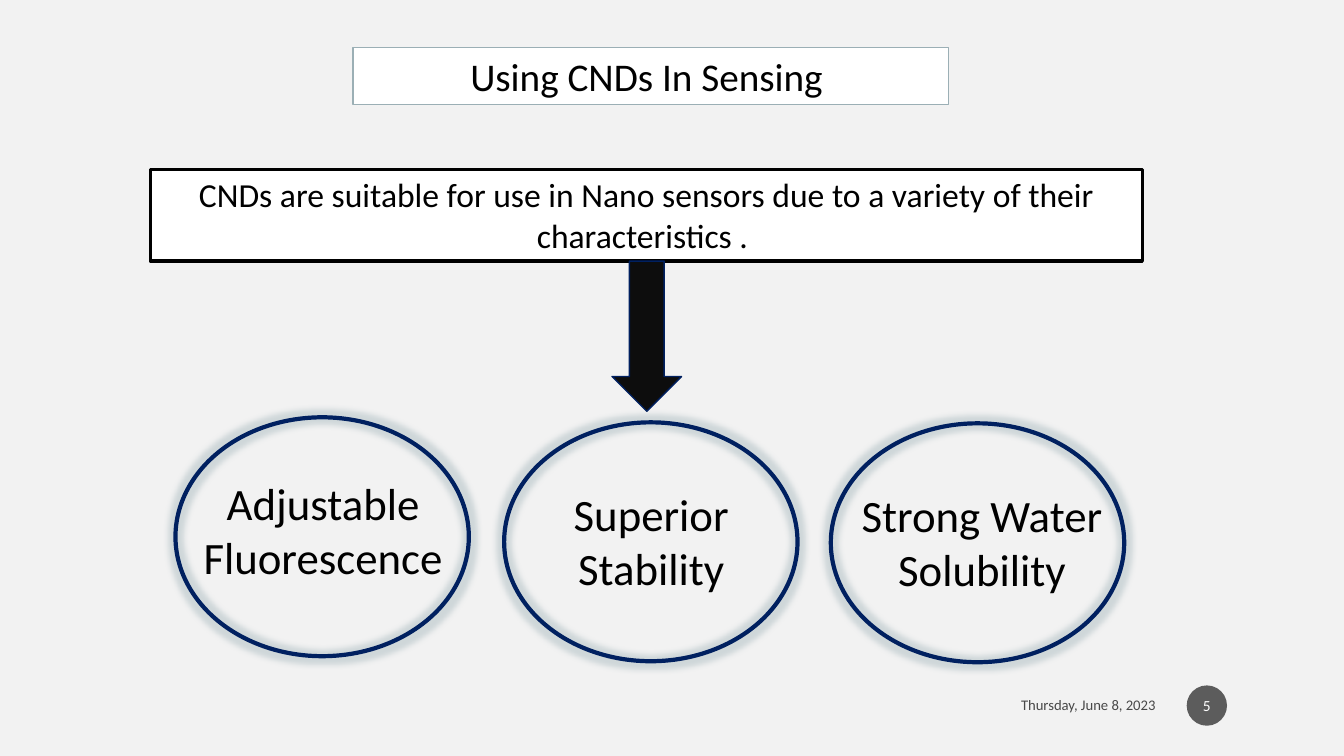
from lxml import etree
from pptx import Presentation
from pptx.dml.color import RGBColor
from pptx.enum import shapes, text
from pptx.oxml import ns
from pptx.util import Inches, Pt

KIND = shapes.MSO_SHAPE
ALIGN = text.PP_ALIGN


def paint(fill, color, alpha=100):
    """Fill with a hex colour, alpha in percent."""
    fill.solid()
    fill.fore_color.rgb = RGBColor.from_string(color)
    if alpha < 100:
        rgb = fill._xPr.find(".//" + ns.qn("a:srgbClr"))
        etree.SubElement(rgb, ns.qn("a:alpha"), val=str(alpha * 1000))


def add_box(place, kind=None, fill=None, fill_alpha=100, line=None, width=1,
            words="", size=18, color="000000", alpha=100, align=ALIGN.CENTER,
            anchor=text.MSO_ANCHOR.TOP, side=0.1):
    """Add a preset shape, or a text box when kind is None."""
    place = [Inches(length) for length in place]
    if kind is None:
        box = slide.shapes.add_textbox(*place)
    else:
        box = slide.shapes.add_shape(kind, *place)
        box.shadow.inherit = False
        if fill:
            paint(box.fill, fill, fill_alpha)
        else:
            box.fill.background()
        if line:
            paint(box.line.fill, line)
            box.line.width = Pt(width)
        else:
            box.line.fill.background()
    if words:
        frame = box.text_frame
        frame.word_wrap = True
        frame.vertical_anchor = anchor
        frame.margin_left = frame.margin_right = Inches(side)
        paragraph = frame.paragraphs[0]
        paragraph.alignment = align
        run = paragraph.add_run()
        run.text = words
        run.font.name = "Calibri"
        run.font.size = Pt(size)
        paint(run.font.fill, color, alpha)
    return box


deck = Presentation()
deck.slide_width, deck.slide_height = Inches(13.33), Inches(7.5)
slide = deck.slides.add_slide(deck.slide_layouts[6])
paint(slide.background.fill, "F2F2F2")

# Footer
add_box((8.55, 6.82, 3.01, 0.35), words="Thursday, June 8, 2023", size=10.5,
        alpha=70, align=ALIGN.RIGHT, anchor=text.MSO_ANCHOR.MIDDLE)
add_box((11.77, 6.8, 0.4, 0.4), KIND.OVAL, fill="1D1D1D", fill_alpha=70,
        words="5", size=11, color="FFFFFF", anchor=text.MSO_ANCHOR.MIDDLE,
        side=0.02)

# Title and statement
add_box((3.5, 0.47, 5.91, 0.57), KIND.RECTANGLE, fill="FFFFFF", line="9BAFB5",
        words="Using CNDs In Sensing ", size=28)
add_box((1.49, 1.68, 9.84, 0.91), KIND.RECTANGLE, fill="FFFFFF",
        line="000000", width=2.25, size=24,
        words="CNDs are suitable for use in Nano sensors due to a variety "
              "of their characteristics . ")
add_box((6.07, 2.59, 0.69, 1.49), KIND.DOWN_ARROW, fill="0D0D0D",
        line="002060")

# Characteristics: ring left and top, label left, top and width
characteristics = [
    ("Adjustable Fluorescence", 1.74, 4.14, 1.76, 4.67, 2.89),
    ("Superior Stability", 5, 4.19, 5.09, 4.78, 2.74),
    ("Strong Water Solubility", 8.24, 4.2, 8.04, 4.79, 3.4),
]
for words, ring_left, ring_top, left, top, width in characteristics:
    ring = add_box((ring_left, ring_top, 2.91, 2.37), KIND.OVAL,
                   line="002060", width=3)
    effects = ring._element.spPr.find(ns.qn("a:effectLst"))
    glow = etree.SubElement(effects, ns.qn("a:glow"), rad=str(Pt(8)))
    tint = etree.SubElement(glow, ns.qn("a:srgbClr"), val="9BAFB5")
    etree.SubElement(tint, ns.qn("a:alpha"), val="40000")
    add_box((left, top, width, 1.18), words=words, size=32)

deck.save("out.pptx")
